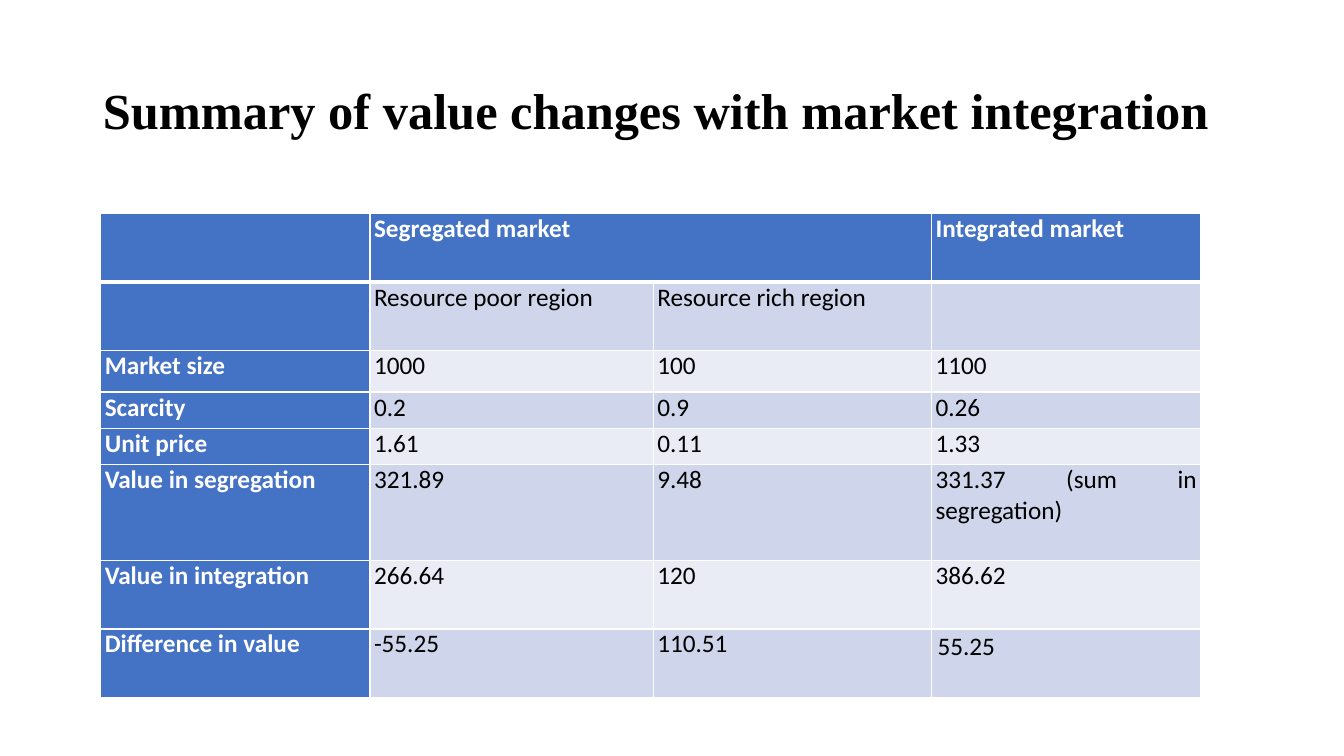
from lxml.etree import SubElement
from pptx import Presentation
from pptx.dml.color import RGBColor
from pptx.enum.text import MSO_ANCHOR, MSO_AUTO_SIZE, PP_ALIGN
from pptx.oxml.ns import qn
from pptx.util import Inches, Pt

# Content
TITLE = "Summary of value changes with market integration"
ROWS = [
    ("", "Segregated market", "", "Integrated market"),
    ("", "Resource poor region", "Resource rich region", ""),
    ("Market size", "1000", "100", "1100"),
    ("Scarcity", "0.2", "0.9", "0.26"),
    ("Unit price", "1.61", "0.11", "1.33"),
    ("Value in segregation", "321.89", "9.48", "331.37 (sum in segregation)"),
    ("Value in integration", "266.64", "120", "386.62"),
    ("Difference in value", "-55.25", "110.51", "55.25"),
]
COLUMN_WIDTHS = [2.67, 2.81, 2.76, 2.67]
ROW_HEIGHTS = [0.68, 0.68, 0.41, 0.36, 0.36, 0.95, 0.68, 0.68]
LAST_CELL = (len(ROWS) - 1, len(COLUMN_WIDTHS) - 1)

# Style
WHITE = RGBColor(0xFF, 0xFF, 0xFF)
BLACK = RGBColor(0x00, 0x00, 0x00)
BLUE = RGBColor(0x44, 0x72, 0xC4)
BANDS = [RGBColor(0xE9, 0xEB, 0xF5), RGBColor(0xCF, 0xD5, 0xEA)]


def add_text(para, text, font, size, color, bold):
    span = para.add_run()
    span.text = text
    span.font.name = font
    span.font.size = Pt(size)
    span.font.color.rgb = color
    span.font.bold = bold


def add_borders(cell, widths):
    properties = cell._tc.get_or_add_tcPr()
    for side, width in widths.items():
        line = SubElement(properties, qn(f"a:ln{side}"), w=str(Pt(width)))
        fill = SubElement(line, qn("a:solidFill"))
        SubElement(fill, qn("a:srgbClr"), val=str(WHITE))


def format_cell(cell, row, column, text):
    is_header = row == 0 or column == 0
    # The line under the header row is thicker
    add_borders(cell, {"L": 1, "R": 1, "T": 3 if row == 1 else 1,
                       "B": 3 if row == 0 else 1})
    cell.fill.solid()
    cell.fill.fore_color.rgb = BLUE if is_header else BANDS[row % 2]
    if not text:
        return
    side, edge = (0.06, 0.03) if (row, column) == LAST_CELL else (0.04, 0)
    cell.margin_left = cell.margin_right = Inches(side)
    cell.margin_top = cell.margin_bottom = Inches(edge)
    para = cell.text_frame.paragraphs[0]
    para.alignment = PP_ALIGN.JUSTIFY
    add_text(para, text, "Calibri", 18, WHITE if is_header else BLACK, is_header)


deck = Presentation()
deck.slide_width, deck.slide_height = Inches(13.33), Inches(7.5)
page = deck.slides.add_slide(deck.slide_layouts[5])

# Title
title = page.shapes.title
title.left, title.top = Inches(0.92), Inches(0.4)
title.width, title.height = Inches(11.5), Inches(1.45)
frame = title.text_frame
frame.word_wrap = True
frame.auto_size = MSO_AUTO_SIZE.NONE
frame.vertical_anchor = MSO_ANCHOR.MIDDLE
heading = frame.paragraphs[0]
heading.alignment = PP_ALIGN.LEFT
heading.line_spacing = 0.9
add_text(heading, TITLE, "Times New Roman", 36, BLACK, True)

# Table
table = page.shapes.add_table(
    len(ROWS), len(COLUMN_WIDTHS), Inches(1), Inches(2.12),
    Inches(sum(COLUMN_WIDTHS)), Inches(sum(ROW_HEIGHTS))).table
for column, width in zip(table.columns, COLUMN_WIDTHS):
    column.width = Inches(width)
for row, height in zip(table.rows, ROW_HEIGHTS):
    row.height = Inches(height)
for row, texts in enumerate(ROWS):
    for column, text in enumerate(texts):
        format_cell(table.cell(row, column), row, column, text)
table.cell(0, 1).merge(table.cell(0, 2))

deck.save("out.pptx")
